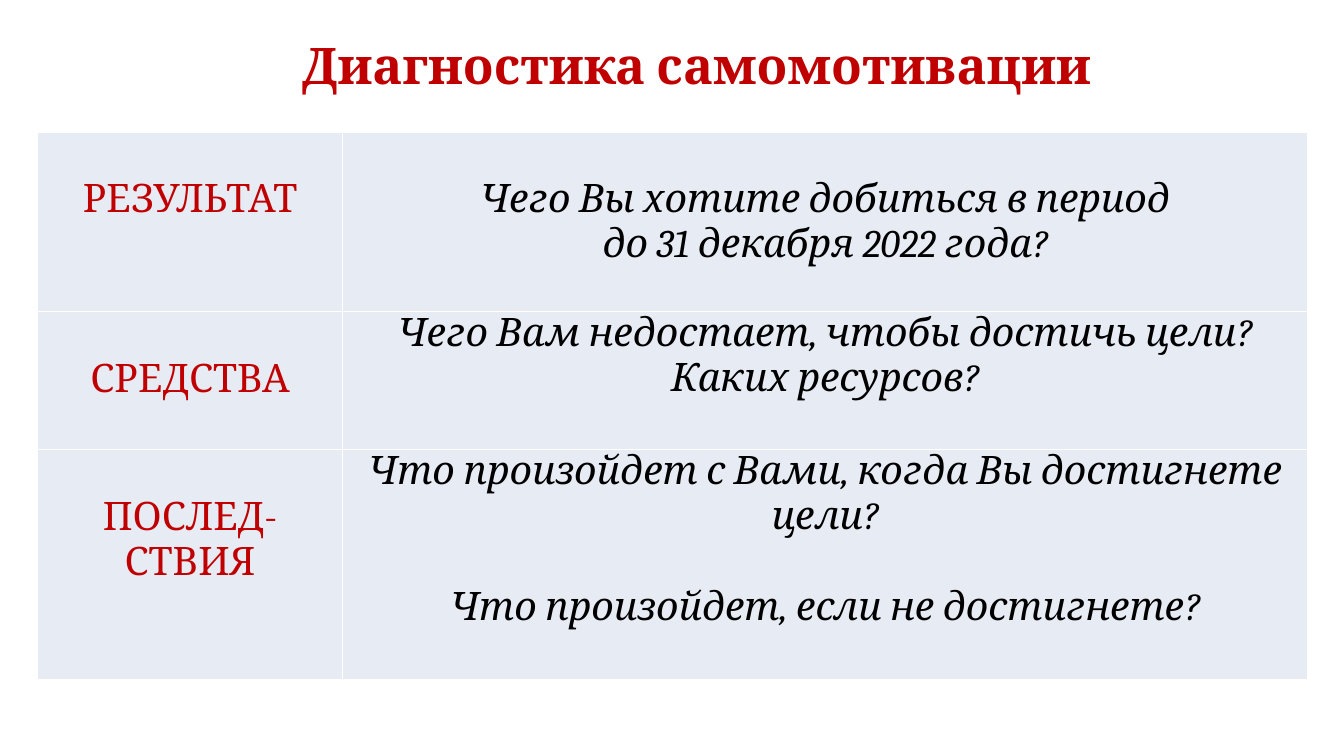
from dataclasses import dataclass

import pptx
import pptx.dml.color
import pptx.enum.text
import pptx.oxml
import pptx.oxml.ns
import pptx.util

Inches = pptx.util.Inches
Pt = pptx.util.Pt

FONT = "Cambria"
RED = "C00000"
BLACK = "000000"
WHITE = "FFFFFF"
PALE = "E7EBF4"
LINE = 0.45  # height of one text line in the table, inches
SIDE = 0.07
COLS = (3.03, 9.57)


@dataclass
class Row:
    height: float
    label: str
    asks: tuple[str, ...]
    top: float = 0
    gap: float = 0


ROWS = (
    Row(1.78, "РЕЗУЛЬТАТ",
        ("Чего Вы хотите добиться в период", "до 31 декабря 2022 года?"), top=LINE),
    Row(1.37, "СРЕДСТВА",
        ("Чего Вам недостает, чтобы достичь цели?", "Каких ресурсов?")),
    Row(2.28, "ПОСЛЕД-СТВИЯ",
        ("Что произойдет с Вами, когда Вы достигнете цели?",
         "Что произойдет, если не достигнете?"), gap=LINE),
)


def color(code: str) -> pptx.dml.color.RGBColor:
    return pptx.dml.color.RGBColor.from_string(code)


def write(frame, lines: tuple[str, ...], *, size: float = 28, tint: str = BLACK,
          bold: bool = False, italic: bool = False, gap: float = 0,
          lead: float = 1.0) -> None:
    """Fill a text frame with centred paragraphs, gap inches apart."""
    frame.word_wrap = True
    for i, line in enumerate(lines):
        para = frame.add_paragraph() if i else frame.paragraphs[0]
        para.alignment = pptx.enum.text.PP_ALIGN.CENTER
        para.line_spacing = lead
        if i:
            para.space_before = Inches(gap)
        run = para.add_run()
        run.text = line
        font = run.font
        font.name, font.size = FONT, Pt(size)
        font.bold, font.italic = bold, italic
        font.color.rgb = color(tint)


def style(cell, top: float) -> None:
    """Set the margins, white borders and fill of a cell."""
    cell.margin_left = cell.margin_right = Inches(SIDE)
    cell.margin_top, cell.margin_bottom = Inches(top), 0
    props = cell._tc.get_or_add_tcPr()
    for edge in "LRTB":
        props.append(pptx.oxml.parse_xml(
            f'<a:ln{edge} {pptx.oxml.ns.nsdecls("a")} w="{Pt(1)}"><a:solidFill>'
            f'<a:srgbClr val="{WHITE}"/></a:solidFill></a:ln{edge}>'))
    cell.fill.solid()
    cell.fill.fore_color.rgb = color(PALE)


def title(slide) -> None:
    box = slide.shapes.add_textbox(Inches(1.66), Inches(0.32), Inches(10.5), Inches(0.68))
    box.text_frame.vertical_anchor = pptx.enum.text.MSO_ANCHOR.BOTTOM
    write(box.text_frame, ("Диагностика самомотивации",),
          size=36, tint=RED, bold=True, lead=0.9)


def grid(slide) -> None:
    high = sum(row.height for row in ROWS)
    table = slide.shapes.add_table(len(ROWS), len(COLS), Inches(0.37), Inches(1.31),
                                   Inches(sum(COLS)), Inches(high)).table
    table.first_row = table.horz_banding = False
    for col, width in zip(table.columns, COLS):
        col.width = Inches(width)
    for i, row in enumerate(ROWS):
        table.rows[i].height = Inches(row.height)
        name, ask = table.cell(i, 0), table.cell(i, 1)
        style(name, LINE)
        write(name.text_frame, (row.label,), tint=RED)
        style(ask, row.top)
        write(ask.text_frame, row.asks, italic=True, gap=row.gap)


def main() -> None:
    deck = pptx.Presentation()
    deck.slide_width, deck.slide_height = Inches(13.33), Inches(7.5)
    slide = deck.slides.add_slide(deck.slide_layouts[6])
    title(slide)
    grid(slide)
    deck.save("out.pptx")


if __name__ == "__main__":
    main()
